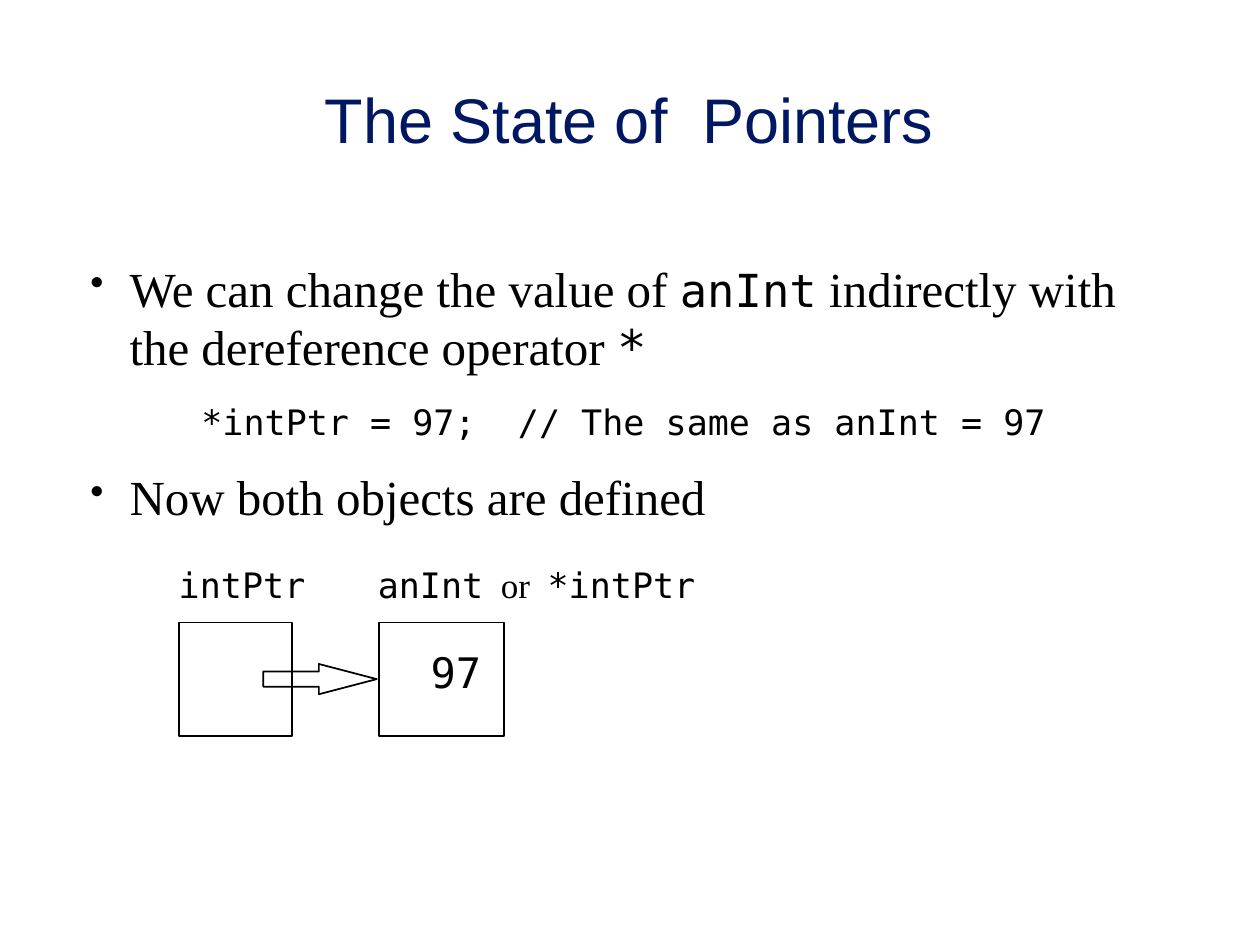
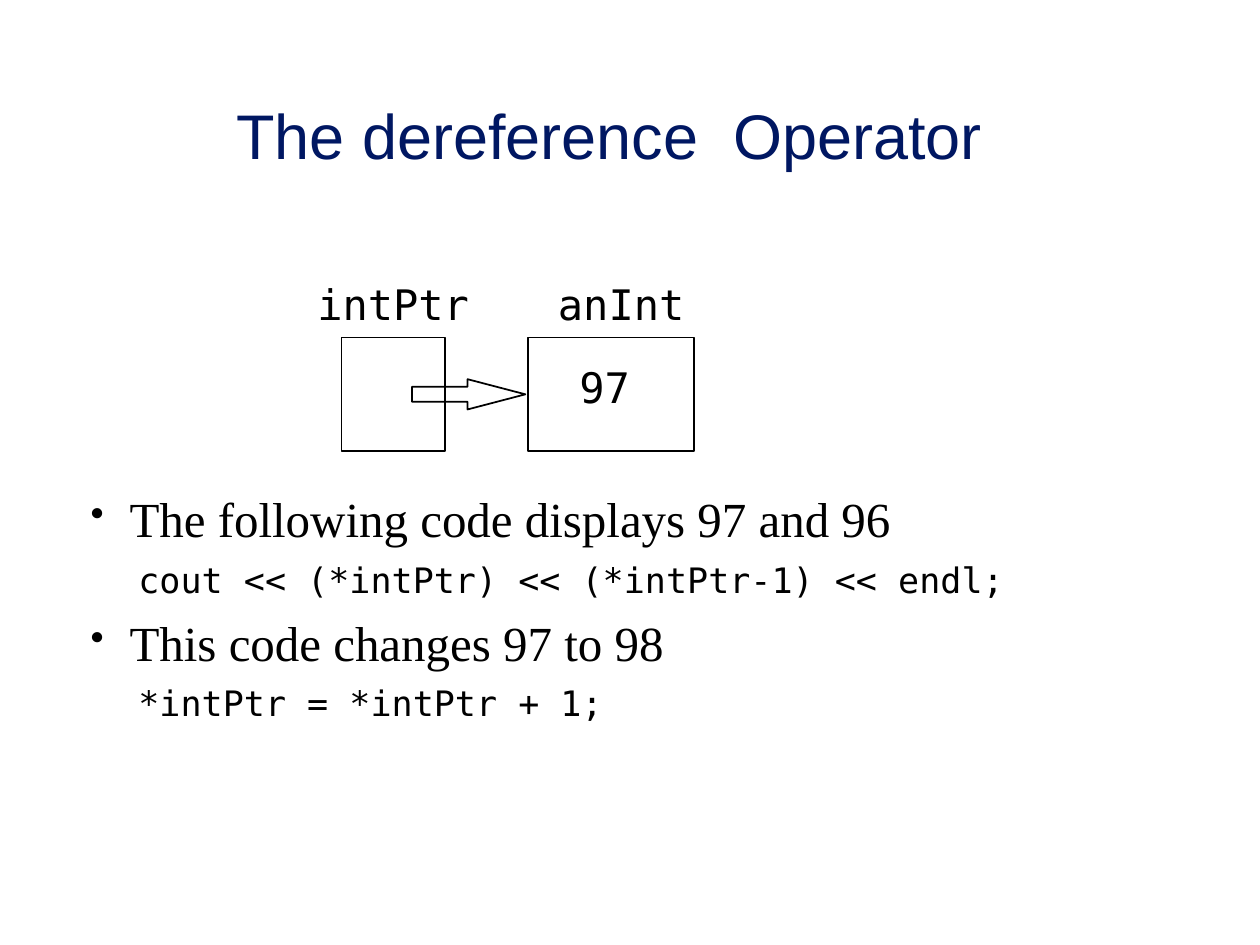
from lxml import etree
from pptx import Presentation
from pptx.dml.color import RGBColor
from pptx.enum.shapes import MSO_SHAPE
from pptx.enum.text import MSO_ANCHOR, PP_ALIGN
from pptx.oxml.ns import qn
from pptx.util import Pt

PX = 9144  # 100 px to the inch
NAVY = RGBColor(0x00, 0x17, 0x62)
BLACK = RGBColor(0x00, 0x00, 0x00)
SANS, SERIF, MONO = "Arial", "Times New Roman", "DejaVu Sans Mono"
TITLE_SIZE, BULLET_SIZE, CODE_SIZE = 36, 28, 20


class Deck:
    def __init__(self, width, height):
        self.prs = Presentation()
        self.prs.slide_width, self.prs.slide_height = width * PX, height * PX
        self.s = None

    def slide(self, title, x, y):
        self.s = self.prs.slides.add_slide(self.prs.slide_layouts[5])
        sp = self.s.shapes.title
        sp.left, sp.top, sp.width, sp.height = x * PX, y * PX, 933 * PX, 146 * PX
        tf = sp.text_frame
        tf.vertical_anchor = MSO_ANCHOR.MIDDLE
        p = tf.paragraphs[0]
        p.alignment = PP_ALIGN.CENTER
        p.line_spacing = 0.87
        self.runs(p, [(title, SANS, TITLE_SIZE)], NAVY)

    def runs(self, p, parts, color=BLACK):
        for text, font, size in parts:
            r = p.add_run()
            r.text = text
            r.font.name, r.font.size = font, Pt(size)
            r.font.color.rgb = color

    def text(self, x, y, w, h, wrap=True):
        tf = self.s.shapes.add_textbox(x * PX, y * PX, w * PX, h * PX).text_frame
        tf.word_wrap = wrap
        return tf

    def label(self, x, y, w, h, *parts):
        p = self.text(x, y, w, h, wrap=False).paragraphs[0]
        p.space_before = Pt(1)
        self.runs(p, parts)

    def paragraph(self, tf, parts, before, margin, indent=0):
        p = tf.paragraphs[0]
        if p.runs:
            p = tf.add_paragraph()
        p.space_before = Pt(before)
        self.runs(p, parts)
        pPr = p._p.get_or_add_pPr()
        pPr.set("marL", str(margin * PX))
        pPr.set("indent", str(indent * PX))
        return pPr

    def bullet(self, tf, before, *parts):
        pPr = self.paragraph(tf, parts, before, 43, -31)
        color = etree.SubElement(pPr, qn("a:buClr"))
        etree.SubElement(color, qn("a:srgbClr"), val=str(BLACK))
        etree.SubElement(pPr, qn("a:buSzPct"), val="80000")
        etree.SubElement(pPr, qn("a:buChar"), char="•")

    def code(self, tf, before, margin, text):
        self.paragraph(tf, [(text, MONO, CODE_SIZE)], before, margin)

    def outline(self, kind, x, y, w, h):
        sp = self.s.shapes.add_shape(kind, x * PX, y * PX, w * PX, h * PX)
        sp.shadow.inherit = False
        sp.fill.background()
        sp.line.color.rgb = BLACK
        sp.line.width = Pt(1)
        return sp

    def pointer(self, y, pointer_x, pointer_w, target_x, target_w, value_x):
        """Draw the pointer cell, its arrow and the target cell holding 97."""
        self.outline(MSO_SHAPE.RECTANGLE, pointer_x, y, pointer_w, 90)
        self.outline(MSO_SHAPE.RECTANGLE, target_x, y, target_w, 90)
        arrow = self.outline(MSO_SHAPE.RIGHT_ARROW, target_x - 92, y + 33, 90, 24)
        arrow.adjustments[0] = 0.5
        arrow.adjustments[1] = 1.91
        self.label(value_x, y + 14, 61, 51, ("97", MONO, 24))


def pointer_state(deck):
    deck.slide("The State of  Pointers", 33, 25)
    tf = deck.text(50, 200, 883, 517)
    deck.bullet(tf, 3,
                ("We can change the value of ", SERIF, BULLET_SIZE),
                ("anInt", MONO, 26),
                (" indirectly with the dereference operator ", SERIF, BULLET_SIZE),
                ("*", MONO, BULLET_SIZE))
    deck.code(tf, 14, 100, "*intPtr = 97;  // The same as anInt = 97")
    deck.bullet(tf, 14, ("Now both objects are defined", SERIF, BULLET_SIZE))
    deck.pointer(494, 142, 90, 301, 99, 332)
    deck.label(132, 442, 121, 44, ("intPtr", MONO, CODE_SIZE))
    deck.label(290, 442, 274, 44,
               ("anInt", MONO, CODE_SIZE),
               ("  or  ", SERIF, CODE_SIZE),
               ("*intPtr", MONO, CODE_SIZE))


def dereference_operator(deck):
    deck.slide("The dereference  Operator", 17, 38)
    tf = deck.text(50, 383, 842, 200)
    deck.bullet(tf, 3, ("The following code displays 97 and 96", SERIF, BULLET_SIZE))
    deck.code(tf, 6, 50, "cout << (*intPtr) << (*intPtr-1) << endl;")
    deck.bullet(tf, 7, ("This code changes 97 to 98", SERIF, BULLET_SIZE))
    deck.code(tf, 6, 50, "*intPtr = *intPtr + 1;")
    deck.pointer(268, 271, 82, 419, 132, 450)
    deck.label(242, 216, 141, 51, ("intPtr", MONO, 24))
    deck.label(433, 216, 121, 51, ("anInt", MONO, 24))


def main():
    deck = Deck(1000, 750)
    pointer_state(deck)
    dereference_operator(deck)
    deck.prs.save("out.pptx")


if __name__ == "__main__":
    main()
